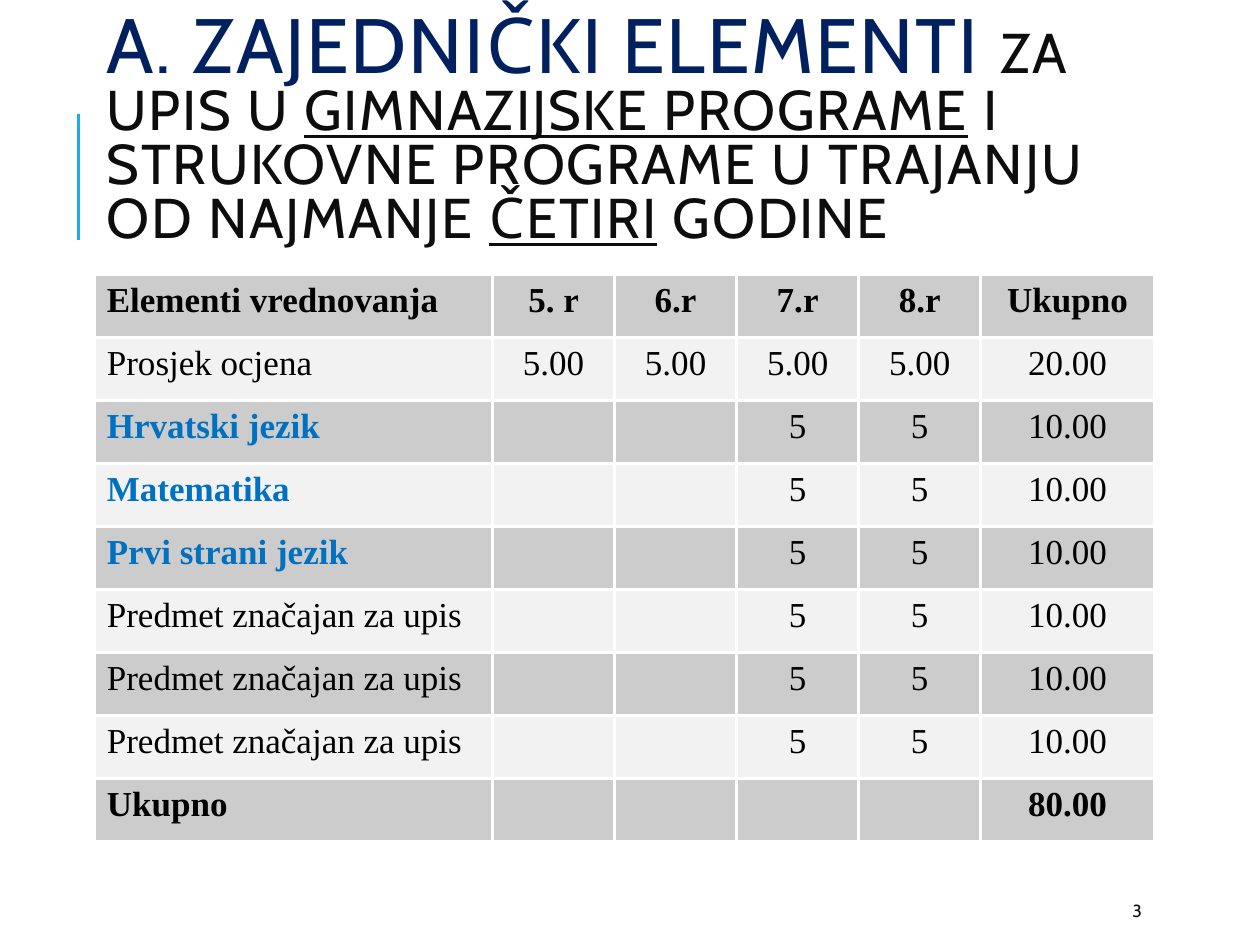
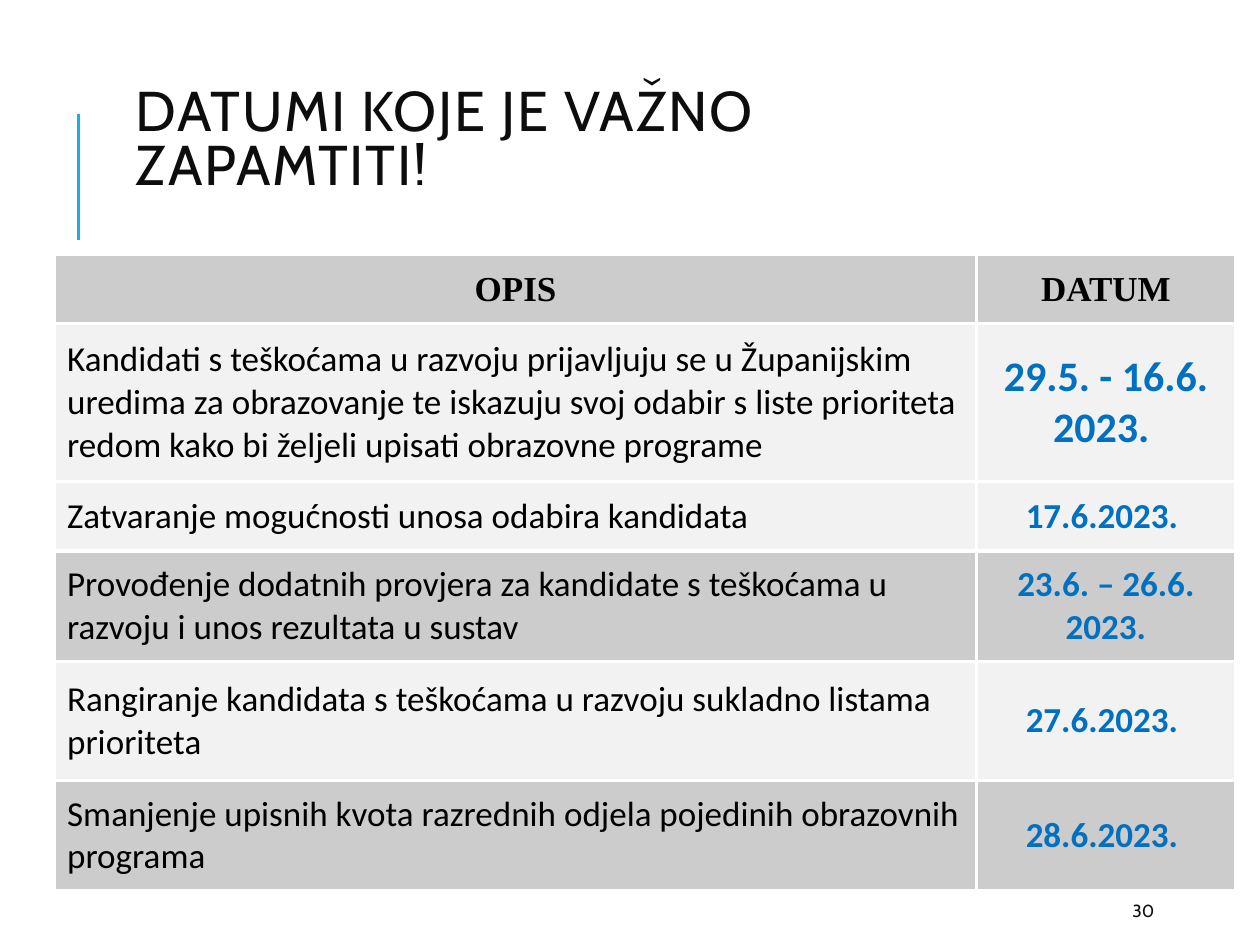
import pptx
import pptx.util
import pptx.dml.color
import pptx.enum.shapes
import pptx.enum.text
import pptx.oxml
import pptx.oxml.ns

Cm = pptx.util.Cm
Align = pptx.enum.text.PP_ALIGN
Anchor = pptx.enum.text.MSO_ANCHOR

INK, NAVY, BLUE, BLACK = "0D0D0D", "002060", "0070C0", "000000"
WHITE, SKY, DARK, LIGHT = "FFFFFF", "1CADE4", "CCCCCC", "F2F2F2"
HEAD, BODY, SERIF = "Cabin", "Calibri", "Times New Roman"

SCORES = [
    ("Elementi vrednovanja", "5. r", "6.r", "7.r", "8.r", "Ukupno"),
    ("Prosjek ocjena", "5.00", "5.00", "5.00", "5.00", "20.00"),
    ("Hrvatski jezik", "", "", "5", "5", "10.00"),
    ("Matematika", "", "", "5", "5", "10.00"),
    ("Prvi strani jezik", "", "", "5", "5", "10.00"),
    *[("Predmet značajan za upis", "", "", "5", "5", "10.00")] * 3,
    ("Ukupno", "", "", "", "", "80.00"),
]
CORE = {"Hrvatski jezik", "Matematika", "Prvi strani jezik"}

DATES = [
    ("OPIS", "DATUM"),
    ("Kandidati s teškoćama u razvoju prijavljuju se u Županijskim uredima "
     "za obrazovanje te iskazuju svoj odabir s liste prioriteta redom kako bi "
     "željeli upisati obrazovne programe", "29.5. - 16.6. 2023. "),
    ("Zatvaranje mogućnosti unosa odabira kandidata", "17.6.2023. "),
    ("Provođenje dodatnih provjera za kandidate s teškoćama u razvoju i unos "
     "rezultata u sustav", "23.6. – 26.6. 2023."),
    ("Rangiranje kandidata s teškoćama u razvoju sukladno listama prioriteta",
     "27.6.2023. "),
    ("Smanjenje upisnih kvota razrednih odjela pojedinih obrazovnih programa",
     "28.6.2023. "),
]

TITLES = {
    "scores": [
        ("A. ZAJEDNIČKI ELEMENTI ", {"size": 44, "color": NAVY}),
        ("ZA UPIS U ", {}),
        ("GIMNAZIJSKE PROGRAME", {"under": True}),
        (" I STRUKOVNE PROGRAME U TRAJANJU OD NAJMANJE ", {}),
        ("ČETIRI", {"under": True}),
        (" GODINE", {}),
    ],
    "dates": [("DATUMI KOJE JE VAŽNO ZAPAMTITI!", {})],
}


def tint(code):
    return pptx.dml.color.RGBColor.from_string(code)


def write(para, text, size=20, font=SERIF, color=BLACK, bold=False,
          under=False, space=0, align=Align.LEFT):
    para.alignment = align
    run = para.add_run()
    run.text = text
    face = run.font
    face.size, face.name = pptx.util.Pt(size), font
    face.bold, face.underline = bold, under
    face.color.rgb = tint(color)
    if space:
        run._r.get_or_add_rPr().set("spc", str(space * 100))


def add_box(slide, *place):
    frame = slide.shapes.add_textbox(*map(Cm, place)).text_frame
    frame.word_wrap = True
    frame.vertical_anchor = Anchor.MIDDLE
    return frame.paragraphs[0]


def add_page(deck, title, place, number):
    slide = deck.slides.add_slide(deck.slide_layouts[6])
    rule = slide.shapes.add_connector(
        pptx.enum.shapes.MSO_CONNECTOR.STRAIGHT,
        Cm(1.58), Cm(4.83), Cm(1.58), Cm(2.29))
    rule.line.color.rgb = tint(SKY)
    rule.line.width = pptx.util.Pt(1.5)
    props = rule._element.spPr
    props.append(pptx.oxml.parse_xml(
        f'<a:effectLst {pptx.oxml.ns.nsdecls("a")}/>'))
    para = add_box(slide, *place)
    para.line_spacing = 0.8
    for text, extra in title:
        write(para, text, **{"size": 32, "font": HEAD, "color": INK,
                             "space": 1, **extra})
    write(add_box(slide, 22.58, 17.98, 2.03, 0.76), str(number),
          size=10, font=HEAD, color=INK)
    return slide


def frame_cell(cell, fill):
    props = cell._tc.get_or_add_tcPr()
    for side in ("lnL", "lnR", "lnT", "lnB"):
        props.append(pptx.oxml.parse_xml(
            f'<a:{side} {pptx.oxml.ns.nsdecls("a")} w="25400"><a:solidFill>'
            f'<a:srgbClr val="{WHITE}"/></a:solidFill></a:{side}>'))
    cell.fill.solid()
    cell.fill.fore_color.rgb = tint(fill)


def add_grid(slide, data, left, top, cols, rows, fills, style,
             anchor=Anchor.TOP):
    grid = slide.shapes.add_table(
        len(rows), len(cols), Cm(left), Cm(top),
        Cm(sum(cols)), Cm(sum(rows))).table
    grid.first_row = grid.horz_banding = False
    for col, width in zip(grid.columns, cols):
        col.width = Cm(width)
    for i, line in enumerate(data):
        grid.rows[i].height = Cm(rows[i])
        for j, text in enumerate(line):
            cell = grid.cell(i, j)
            frame_cell(cell, fills[i])
            cell.vertical_anchor = anchor
            if text:
                write(cell.text_frame.paragraphs[0], text, **style(i, j))


def score_style(i, j):
    core = j == 0 and SCORES[i][0] in CORE
    return {"bold": core or i in (0, len(SCORES) - 1),
            "color": BLUE if core else BLACK,
            "align": Align.CENTER if j else Align.LEFT}


def date_style(i, j):
    if i == 0:
        return {"bold": True, "align": Align.CENTER}
    if j == 0:
        return {"font": BODY}
    return {"font": BODY, "bold": True, "color": BLUE,
            "size": 24 if i == 1 else 20, "align": Align.CENTER}


def main():
    """Build the two enrolment slides."""
    deck = pptx.Presentation()
    deck.slide_width, deck.slide_height = Cm(25.4), Cm(19.05)
    page = add_page(deck, TITLES["scores"], (1.9, 0.43, 21.18, 4.45), 3)
    add_grid(page, SCORES, 1.9, 5.54, [8.03] + [2.46] * 4 + [3.5],
             [1.27] * len(SCORES),
             [LIGHT if i % 2 else DARK for i in range(len(SCORES))],
             score_style)
    page = add_page(deck, TITLES["dates"], (2.49, 1.37, 19.08, 3), 30)
    add_grid(page, DATES, 1.1, 5.13, [18.59, 5.21],
             [1.4, 3.18, 1.4, 2.23, 2.39, 2.23],
             [DARK, LIGHT, LIGHT, DARK, LIGHT, DARK],
             date_style, Anchor.MIDDLE)
    deck.save("out.pptx")


if __name__ == "__main__":
    main()
